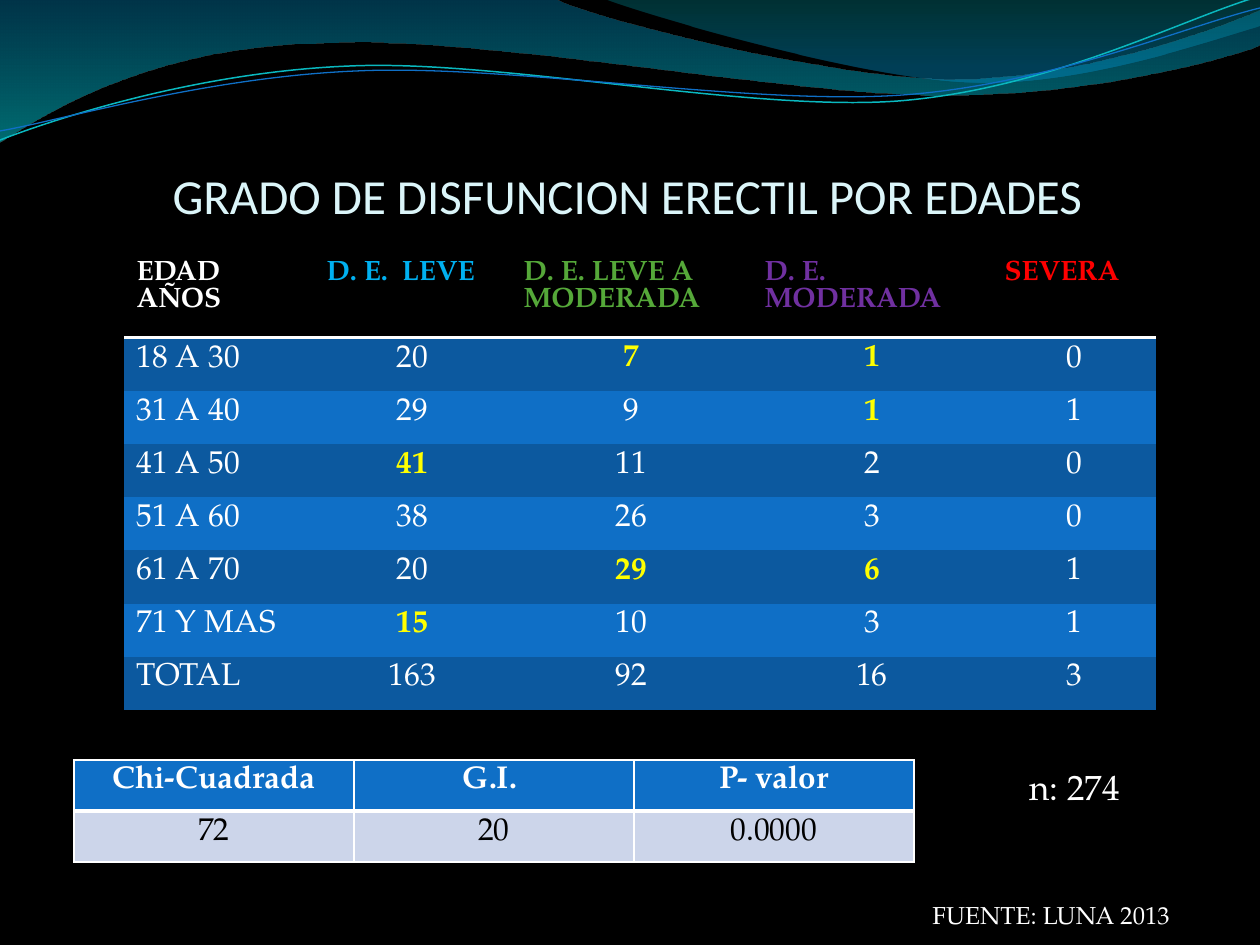
from lxml.etree import SubElement
from pptx import Presentation
from pptx.dml.color import RGBColor
from pptx.enum.text import MSO_ANCHOR as Anchor, MSO_AUTO_SIZE as AutoSize, PP_ALIGN as Align
from pptx.oxml.ns import qn
from pptx.util import Emu, Pt

EMU_PER_PX = 914400 / 126
SERIF = "TeX Gyre Pagella"
NO_GRID_STYLE = "{2D5ABB26-0587-4C30-8999-92F81FD0307C}"
COLORS = {
    "black": "000000", "white": "FFFFFF", "title": "DBF5F9", "yellow": "FFFF00",
    "sky": "00B0F0", "green": "55A839", "purple": "7030A0", "red": "FF0000",
    "dark row": "0C599F", "blue": "0F6FC6", "pale": "CCD5EA", "cyan": "0AB8BF",
    "wave top": "0074A1", "wave bottom": "00C6CF",
    "crest top": "00A1A9", "crest bottom": "008BBF",
}

# Outlines: a pair is a straight step, six numbers are a Bezier curve.
WAVE = [(0, 0), (554, -1), (600, 21, 837, 79, 955, 79), (1075, 79, 1207, 33, 1260, 11),
        (1261, 45), (1239, 55, 1096, 96, 940, 95), (784, 95, 481, 35, 324, 43),
        (163, 45, 58, 105, -1, 142), (0, 0)]
CREST = [(604, -1), (641, 14, 859, 78, 969, 82), (1079, 87, 1211, 40, 1260, 26),
         (1260, 0), (604, -1)]
CYAN_LINE = [(0, 140), (60, 117, 199, 72, 349, 66), (498, 59, 747, 112, 898, 101),
             (1050, 89, 1182, 19, 1257, -3)]
BLUE_LINE = [(0, 131), (59, 121, 207, 77, 357, 71), (508, 64, 752, 106, 903, 95),
             (1053, 84, 1186, 26, 1260, 8)]

AGE_HEADERS = [("EDAD\nAÑOS", "white"), ("D. E.  LEVE", "sky"), ("D. E. LEVE A MODERADA", "green"),
               ("D. E. MODERADA", "purple"), ("SEVERA", "red")]
AGE_ROWS = [
    ("18 A 30", 20, 7, 1, 0),
    ("31 A 40", 29, 9, 1, 1),
    ("41 A 50", 41, 11, 2, 0),
    ("51 A 60", 38, 26, 3, 0),
    ("61 A 70", 20, 29, 6, 1),
    ("71 Y MAS", 15, 10, 3, 1),
    ("TOTAL", 163, 92, 16, 3),
]
HIGHLIGHTS = {(1, 2), (1, 3), (2, 3), (3, 1), (5, 2), (5, 3), (6, 1)}
TEST_ROWS = [("Chi-Cuadrada", "G.I. ", "P- valor"), ("72", "20", "0.0000")]


def px(length):
    return Emu(round(length * EMU_PER_PX))


def rgb(name):
    return RGBColor.from_string(COLORS[name])


def write(frame, text, size, color, font=SERIF, bold=False, align=Align.LEFT):
    for index, line in enumerate(text.split("\n")):
        para = frame.add_paragraph() if index else frame.paragraphs[0]
        para.alignment = align
        span = para.add_run()
        span.text = line
        span.font.name, span.font.size, span.font.bold = font, Pt(size), bold
        span.font.color.rgb = rgb(color)


def add_outline(page, outline, close):
    """Build the outline from its end points, then bend the curved steps."""
    ends = [(px(step[-2]), px(step[-1])) for step in outline]
    builder = page.shapes.build_freeform(*ends[0])
    builder.add_line_segments(ends[1:], close=close)
    shape = builder.convert_to_shape()
    shape.shadow.inherit = False
    straight_steps = list(shape._element.iter(qn("a:lnTo")))
    for straight, step in zip(straight_steps, outline[1:]):
        if len(step) == 6:
            straight.tag = qn("a:cubicBezTo")
            for child in list(straight):
                straight.remove(child)
            for x, y in zip(step[::2], step[1::2]):
                SubElement(straight, qn("a:pt"), x=str(px(x) - shape.left),
                           y=str(px(y) - shape.top))
    return shape


def add_gradient_wave(page, outline, stops):
    """Fill downwards; each stop is position, colour and opacity in percent."""
    shape = add_outline(page, outline, True)
    shape.line.fill.background()
    shape.fill.gradient()
    shape.fill.gradient_angle = 270
    for stop, (position, color, _) in zip(shape.fill.gradient_stops, stops):
        stop.position = position / 100
        stop.color.rgb = rgb(color)
    tints = shape._element.spPr.iter(qn("a:srgbClr"))
    for tint, (_, _, opacity) in zip(tints, stops):
        SubElement(tint, qn("a:alpha")).set("val", str(opacity * 1000))


def add_wave_line(page, outline, color, width):
    shape = add_outline(page, outline, False)
    shape.fill.background()
    shape.line.color.rgb = rgb(color)
    shape.line.width = Pt(width)


def add_title(page, text):
    title = page.shapes.title
    title.left, title.top, title.width, title.height = map(px, (55, 135, 1144, 89))
    frame = title.text_frame
    frame.margin_left = frame.margin_right = frame.margin_bottom = 0
    frame.margin_top = px(6)
    frame.vertical_anchor = Anchor.BOTTOM
    write(frame, text, 28, "title", font="Calibri", align=Align.CENTER)


def add_label(page, text, size, left, top, width, height):
    box = page.shapes.add_textbox(*map(px, (left, top, width, height)))
    box.text_frame.word_wrap = True
    box.text_frame.auto_size = AutoSize.SHAPE_TO_FIT_TEXT
    write(box.text_frame, text, size, "white")


def add_plain_table(page, left, top, widths, heights):
    frame = page.shapes.add_table(len(heights), len(widths), px(left), px(top),
                                  px(sum(widths)), px(sum(heights)))
    table = frame.table
    table._tbl.tblPr.find(qn("a:tableStyleId")).text = NO_GRID_STYLE
    for column, width in zip(table.columns, widths):
        column.width = px(width)
    for row, height in zip(table.rows, heights):
        row.height = px(height)
    return table


def fill_cell(cell, text, fill, size, color, borders=(), **style):
    """Borders are (side, points) pairs in the order L, R, T, B."""
    write(cell.text_frame, text, size, color, **style)
    properties = cell._tc.get_or_add_tcPr()
    for side, width in borders:
        line = SubElement(properties, qn(f"a:ln{side}"), w=str(Pt(width)))
        paint = SubElement(line, qn("a:solidFill"))
        SubElement(paint, qn("a:srgbClr"), val=COLORS["white"])
    cell.fill.solid()
    cell.fill.fore_color.rgb = rgb(fill)


def add_age_table(page):
    body_height = 372 / len(AGE_ROWS)
    table = add_plain_table(page, 124, 254, [190, 197, 241, 240, 164],
                            [84] + [body_height] * len(AGE_ROWS))
    for column, (text, color) in enumerate(AGE_HEADERS):
        fill_cell(table.cell(0, column), text, "black", 16, color, [("B", 2)], bold=True)
    for row, values in enumerate(AGE_ROWS, 1):
        fill = "dark row" if row % 2 else "blue"
        for column, value in enumerate(values):
            marked = (row, column) in HIGHLIGHTS
            fill_cell(table.cell(row, column), str(value), fill, 18,
                      "yellow" if marked else "white", bold=marked,
                      align=Align.CENTER if column else Align.LEFT)


def add_test_table(page):
    table = add_plain_table(page, 74, 760, [280] * 3, [51] * 2)
    looks = [("blue", "white", True, 1, 3), ("pale", "black", False, 3, 1)]
    for row, (values, look) in enumerate(zip(TEST_ROWS, looks)):
        fill, color, bold, above, below = look
        borders = [("L", 1), ("R", 1), ("T", above), ("B", below)]
        for column, value in enumerate(values):
            fill_cell(table.cell(row, column), value, fill, 18, color, borders,
                      bold=bold, align=Align.CENTER)


def main():
    deck = Presentation()
    deck.slide_width, deck.slide_height = px(1260), px(945)
    page = deck.slides.add_slide(deck.slide_layouts[5])
    page.background.fill.solid()
    page.background.fill.fore_color.rgb = rgb("black")

    add_gradient_wave(page, WAVE, [(0, "wave top", 45), (100, "wave bottom", 55)])
    add_gradient_wave(page, CREST, [(0, "crest top", 30), (80, "crest bottom", 45)])
    add_wave_line(page, CYAN_LINE, "cyan", 0.85)
    add_wave_line(page, BLUE_LINE, "blue", 0.75)
    add_title(page, "GRADO DE DISFUNCION ERECTIL POR EDADES")
    add_age_table(page)
    add_test_table(page)
    add_label(page, "n: 274", 20, 1017, 759, 159, 55)
    add_label(page, "FUENTE: LUNA 2013", 14, 920, 894, 306, 43)
    deck.save("out.pptx")


if __name__ == "__main__":
    main()
